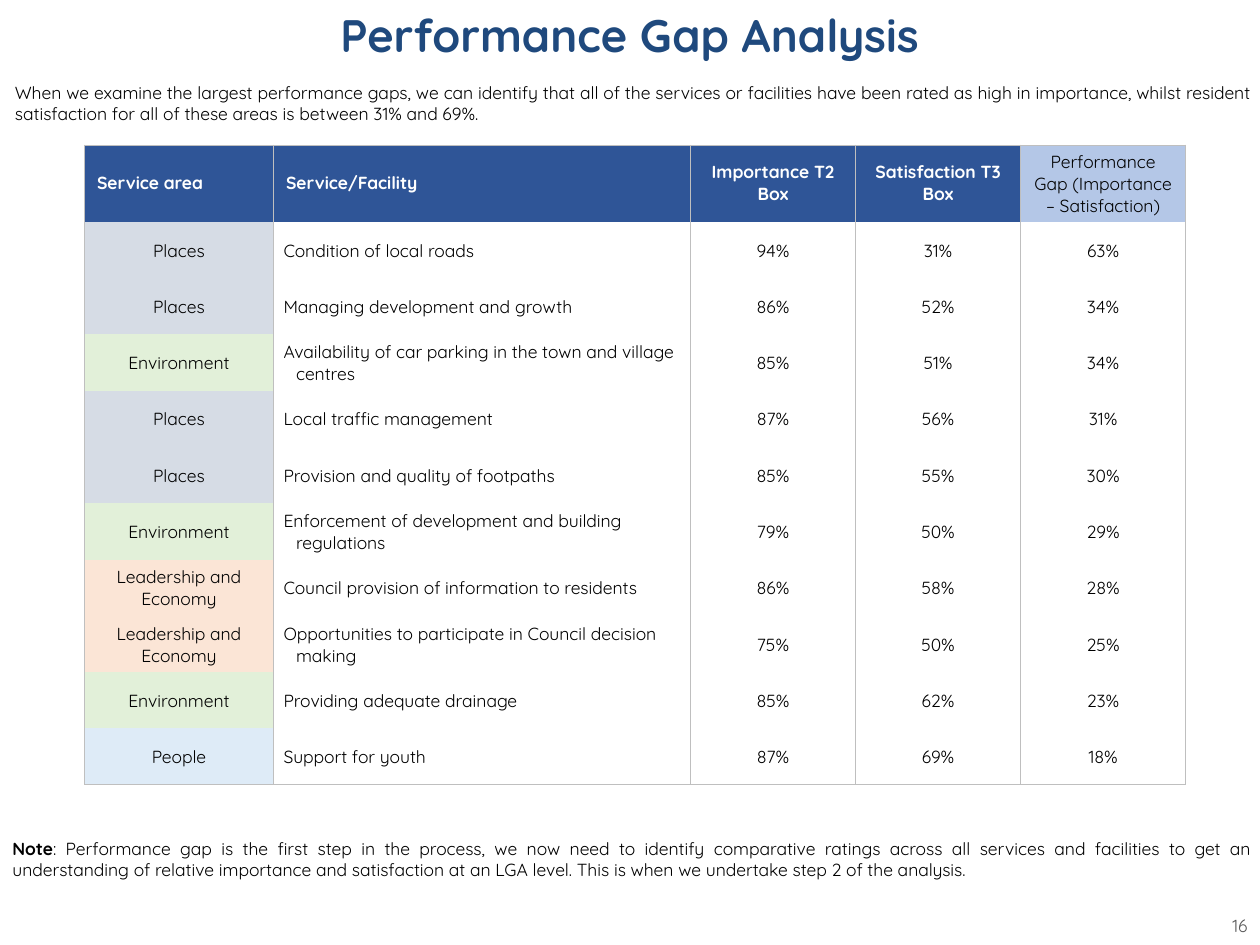
from lxml.etree import SubElement
from pptx import Presentation
from pptx.dml.color import RGBColor
from pptx.enum.text import MSO_ANCHOR, MSO_AUTO_SIZE, PP_ALIGN
from pptx.oxml.ns import qn
from pptx.util import Inches, Pt

FONT = "Quicksand"
COLORS = {
    "title": "1F497D", "text": "000000", "number": "595959", "white": "FFFFFF",
    "header": "2F5597", "gap": "B4C7E7", "border": "BFBFBF",
    "Places": "D6DCE5", "Environment": "E2F0D9",
    "Leadership and Economy": "FBE5D6", "People": "DEEBF7",
}
COLUMN_WIDTHS = [1.5, 3.31, 1.31, 1.31, 1.31]
HEADER_HEIGHT = 0.61
HEADERS = ["Service area", "Service/Facility", "Importance T2 Box",
           "Satisfaction T3 Box", "Performance Gap (Importance – Satisfaction)"]
SERVICES = [
    ("Places", "Condition of local roads", "94%", "31%", "63%"),
    ("Places", "Managing development and growth", "86%", "52%", "34%"),
    ("Environment", "Availability of car parking in the town and village centres",
     "85%", "51%", "34%"),
    ("Places", "Local traffic management", "87%", "56%", "31%"),
    ("Places", "Provision and quality of footpaths", "85%", "55%", "30%"),
    ("Environment", "Enforcement of development and building regulations",
     "79%", "50%", "29%"),
    ("Leadership and Economy", "Council provision of information to residents",
     "86%", "58%", "28%"),
    ("Leadership and Economy", "Opportunities to participate in Council decision making",
     "75%", "50%", "25%"),
    ("Environment", "Providing adequate drainage", "85%", "62%", "23%"),
    ("People", "Support for youth", "87%", "69%", "18%"),
]
INTRO = ("When we examine the largest performance gaps, we can identify that all of the "
         "services or facilities have been rated as high in importance, whilst resident "
         "satisfaction for all of these areas is between 31% and 69%.")
NOTE = (": Performance gap is the first step in the process, we now need to identify "
        "comparative ratings across all services and facilities to get an understanding of "
        "relative importance and satisfaction at an LGA level. This is when we undertake "
        "step 2 of the analysis.")


def add_run(paragraph, text, color="text", size=10, bold=False):
    """Add one formatted run to a paragraph."""
    run = paragraph.add_run()
    run.text = text
    run.font.name = FONT
    run.font.size = Pt(size)
    run.font.bold = bold
    run.font.color.rgb = RGBColor.from_string(COLORS[color])


def add_title(slide, box, text):
    """Place the slide title in the given box."""
    title = slide.shapes.title
    title.left, title.top, title.width, title.height = map(Inches, box)
    frame = title.text_frame
    frame.auto_size = MSO_AUTO_SIZE.NONE
    frame.vertical_anchor = MSO_ANCHOR.MIDDLE
    paragraph = frame.paragraphs[0]
    paragraph.alignment = PP_ALIGN.CENTER
    add_run(paragraph, text, "title", 26, True)


def add_text(slide, box, alignment):
    """Add a wrapping text box and return its first paragraph."""
    frame = slide.shapes.add_textbox(*map(Inches, box)).text_frame
    frame.word_wrap = True
    paragraph = frame.paragraphs[0]
    paragraph.alignment = alignment
    return paragraph


def set_borders(cell, visible):
    """Draw the named sides of a cell and clear the others."""
    properties = cell._tc.get_or_add_tcPr()
    for side in "LRTB":
        line = SubElement(properties, qn(f"a:ln{side}"), w=str(Pt(0.5)))
        if side in visible:
            fill = SubElement(line, qn("a:solidFill"))
            SubElement(fill, qn("a:srgbClr"), val=COLORS["border"])
        else:
            SubElement(line, qn("a:noFill"))


def format_cell(cell, text, fill, borders, centered, color="text", bold=False):
    """Fill, border and write one table cell."""
    set_borders(cell, borders)
    if fill:
        cell.fill.solid()
        cell.fill.fore_color.rgb = RGBColor.from_string(COLORS[fill])
    else:
        cell.fill.background()
    cell.vertical_anchor = MSO_ANCHOR.MIDDLE
    paragraph = cell.text_frame.paragraphs[0]
    paragraph.alignment = PP_ALIGN.CENTER if centered else PP_ALIGN.LEFT
    add_run(paragraph, text, color, bold=bold)


def add_gap_table(slide, box):
    """Add the table of performance gaps in the given box."""
    table = slide.shapes.add_table(
        len(SERVICES) + 1, len(HEADERS), *map(Inches, box)).table
    table.horz_banding = False
    for column, width in zip(table.columns, COLUMN_WIDTHS):
        column.width = Inches(width)
    for row in table.rows:
        row.height = Inches((box[3] - HEADER_HEIGHT) / len(SERVICES))
    table.rows[0].height = Inches(HEADER_HEIGHT)

    for column, text in enumerate(HEADERS):
        is_gap = column == len(HEADERS) - 1
        format_cell(table.cell(0, column), text, "gap" if is_gap else "header", "LRT",
                    column > 1, "text" if is_gap else "white", not is_gap)

    for row, service in enumerate(SERVICES, 1):
        borders = "LRB" if row == len(SERVICES) else "LR"
        for column, text in enumerate(service):
            cell = table.cell(row, column)
            cell.margin_left = Inches(0.08 if column == 1 else 0.01)
            cell.margin_right = cell.margin_top = Inches(0.01)
            cell.margin_bottom = 0
            format_cell(cell, text, None if column else text, borders, column != 1)
            if column == 1:
                indent = cell.text_frame.paragraphs[0]._p.get_or_add_pPr()
                indent.set("marL", str(Inches(0.1)))
                indent.set("indent", str(Inches(-0.1)))


def main():
    """Build and save the slide."""
    presentation = Presentation()
    presentation.slide_width, presentation.slide_height = Inches(10), Inches(7.5)
    slide = presentation.slides.add_slide(presentation.slide_layouts[5])
    add_title(slide, (0, 0, 10, 0.55), "Performance Gap Analysis")
    add_run(add_text(slide, (0.02, 0.6, 10, 0.45), PP_ALIGN.JUSTIFY), INTRO)
    add_gap_table(slide, (0.67, 1.15, 8.74, 5.08))
    note = add_text(slide, (0, 6.6, 10.02, 0.45), PP_ALIGN.JUSTIFY)
    add_run(note, "Note", bold=True)
    add_run(note, NOTE)
    add_run(add_text(slide, (9.57, 7.21, 0.43, 0.27), PP_ALIGN.RIGHT), "16", "number")
    presentation.save("out.pptx")


if __name__ == "__main__":
    main()
